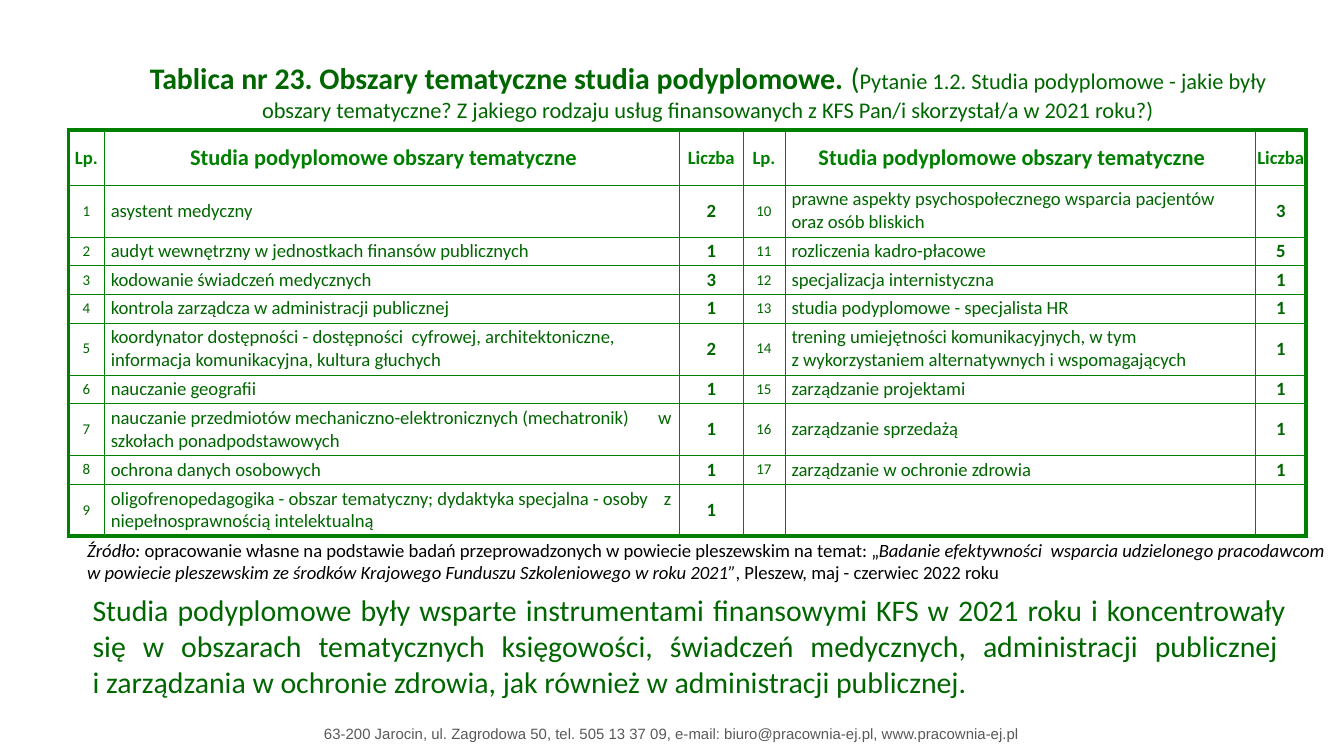
from lxml import etree
from pptx import Presentation
from pptx.dml.color import RGBColor
from pptx.enum.text import MSO_ANCHOR, MSO_AUTO_SIZE, PP_ALIGN
from pptx.oxml.ns import qn
from pptx.util import Inches, Pt

LEFT, CENTER, JUSTIFY = PP_ALIGN.LEFT, PP_ALIGN.CENTER, PP_ALIGN.JUSTIFY
TOP, MIDDLE = MSO_ANCHOR.TOP, MSO_ANCHOR.MIDDLE
NO_AUTOFIT = MSO_AUTO_SIZE.NONE
TITLE_ONLY = 5

COLORS = {"green": "006600", "table": "008000", "text": "000000", "footer": "595959"}
THIN, THICK = 0.25, 2.25

# Column widths as percent of slide width, row heights as percent of slide height
COLUMNS = [2.65, 42.8, 4.75, 3.1, 35, 3.8]
HEADER_ROW, ONE_LINE, TWO_LINES = 7.25, 3.8, 6.87
TWO_LINE_ROWS = {1, 5, 7, 9}

HEADINGS = ["Lp.", "Studia podyplomowe obszary tematyczne", "Liczba"] * 2
AREAS = [
    ("asystent medyczny", 2),
    ("audyt wewnętrzny w jednostkach finansów publicznych", 1),
    ("kodowanie świadczeń medycznych", 3),
    ("kontrola zarządcza w administracji publicznej", 1),
    ("koordynator dostępności - dostępności  cyfrowej, architektoniczne, "
     "informacja komunikacyjna, kultura głuchych", 2),
    ("nauczanie geografii", 1),
    ("nauczanie przedmiotów mechaniczno-elektronicznych (mechatronik)\tw\v"
     "szkołach ponadpodstawowych", 1),
    ("ochrona danych osobowych", 1),
    ("oligofrenopedagogika - obszar tematyczny; dydaktyka specjalna - osoby\tz\v"
     "niepełnosprawnością intelektualną", 1),
    ("prawne aspekty psychospołecznego wsparcia pacjentów oraz osób bliskich", 3),
    ("rozliczenia kadro-płacowe", 5),
    ("specjalizacja internistyczna", 1),
    ("studia podyplomowe - specjalista HR", 1),
    ("trening umiejętności komunikacyjnych, w tym\v"
     "z wykorzystaniem alternatywnych i wspomagających", 1),
    ("zarządzanie projektami", 1),
    ("zarządzanie sprzedażą", 1),
    ("zarządzanie w ochronie zdrowia", 1),
]
ROWS_PER_HALF = 9


class SlideBuilder:
    def __init__(self, presentation, font="Calibri"):
        self.width, self.height = presentation.slide_width, presentation.slide_height
        self.font = font
        self.slide = presentation.slides.add_slide(presentation.slide_layouts[TITLE_ONLY])

    def x(self, percent):
        return round(self.width * percent / 100)

    def y(self, percent):
        return round(self.height * percent / 100)

    def box(self, left, top, width, height):
        return self.x(left), self.y(top), self.x(width), self.y(height)

    def style(self, paragraph, size, color, align=LEFT, bold=False, font=None):
        paragraph.alignment = align
        paragraph.font.name = font or self.font
        paragraph.font.size = Pt(size)
        paragraph.font.bold = bold
        paragraph.font.color.rgb = RGBColor.from_string(COLORS[color])

    def title(self, place, runs, color):
        shape = self.slide.shapes.title
        shape.left, shape.top, shape.width, shape.height = self.box(*place)
        frame = shape.text_frame
        frame.word_wrap, frame.auto_size, frame.vertical_anchor = True, NO_AUTOFIT, TOP
        paragraph = frame.paragraphs[0]
        self.style(paragraph, 16, color, CENTER)
        for text, size, bold in runs:
            run = paragraph.add_run()
            run.text = text
            run.font.size, run.font.bold = Pt(size), bold

    def text(self, place, runs, size, color, align=LEFT, font=None):
        frame = self.slide.shapes.add_textbox(*self.box(*place)).text_frame
        frame.word_wrap = True
        paragraph = frame.paragraphs[0]
        if isinstance(runs, str):
            paragraph.text = runs
        else:
            for text, italic in runs:
                run = paragraph.add_run()
                run.text, run.font.italic = text, italic
        self.style(paragraph, size, color, align, font=font)

    def table(self, left, top, columns, rows):
        place = self.box(left, top, sum(columns), sum(rows))
        table = self.slide.shapes.add_table(len(rows), len(columns), *place).table
        table.first_row = table.horz_banding = False
        for column, width in zip(table.columns, columns):
            column.width = self.x(width)
        for row, height in zip(table.rows, rows):
            row.height = self.y(height)
        last_row, last_column = len(rows) - 1, len(columns) - 1
        for r in range(len(rows)):
            for c in range(len(columns)):
                outer = {"L": c == 0, "R": c == last_column, "T": r == 0, "B": r == last_row}
                self.borders(table.cell(r, c), outer)
        return table

    def borders(self, cell, outer):
        cell.fill.background()
        properties = cell._tc.get_or_add_tcPr()
        for index, (side, is_outer) in enumerate(outer.items()):
            line = etree.Element(qn(f"a:ln{side}"), w=str(Pt(THICK if is_outer else THIN)))
            fill = etree.SubElement(line, qn("a:solidFill"))
            etree.SubElement(fill, qn("a:srgbClr"), val=COLORS["table"])
            properties.insert(index, line)

    def cell(self, cell, text, size, color, align=CENTER, bold=False, insets=(0.05, 0, 0.05, 0)):
        (cell.margin_left, cell.margin_top,
         cell.margin_right, cell.margin_bottom) = map(Inches, insets)
        cell.vertical_anchor = MIDDLE
        paragraph = cell.text_frame.paragraphs[0]
        paragraph.text = text
        if "\t" in text:
            tabs = etree.SubElement(paragraph._p.get_or_add_pPr(), qn("a:tabLst"))
            etree.SubElement(tabs, qn("a:tab"), pos=str(Inches(4.17)), algn="r")
        self.style(paragraph, size, color, align, bold)


def main():
    presentation = Presentation()
    presentation.slide_width = Inches(10)
    presentation.slide_height = presentation.slide_width * 9 // 16
    builder = SlideBuilder(presentation)

    # Contact line
    builder.text((6, 95, 88, 4.27),
                 "63-200 Jarocin, ul. Zagrodowa 50, tel. 505 13 37 09, "
                 "e-mail: biuro@pracownia-ej.pl, www.pracownia-ej.pl",
                 8, "footer", CENTER, "Arial")

    # Title
    builder.title((9, 7.05, 87.4, 10.14), [
        ("Tablica nr 23. Obszary tematyczne studia podyplomowe. ", 16, True),
        ("(", 16, False),
        ("Pytanie 1.2. Studia podyplomowe - jakie były obszary tematyczne? Z jakiego "
         "rodzaju usług finansowanych z KFS Pan/i skorzystał/a w 2021 roku?)", 12, False),
    ], "green")

    # Table of study areas, in two halves side by side
    heights = [HEADER_ROW] + [TWO_LINES if row in TWO_LINE_ROWS else ONE_LINE
                              for row in range(1, ROWS_PER_HALF + 1)]
    table = builder.table(5.1, 17.22, COLUMNS, heights)
    for column, heading in enumerate(HEADINGS):
        wide = column % 3 == 1
        builder.cell(table.cell(0, column), heading, 12 if wide else 10, "table", bold=True,
                     insets=(0.01, 0.01, 0.13 if wide else 0.01, 0))
    for index, (area, count) in enumerate(AREAS):
        half, row = divmod(index, ROWS_PER_HALF)
        number_cell, area_cell, count_cell = (
            table.cell(row + 1, half * 3 + column) for column in range(3))
        builder.cell(number_cell, str(index + 1), 8, "green")
        builder.cell(area_cell, area, 10, "green", LEFT)
        builder.cell(count_cell, str(count), 10, "green", bold=True)
    for column in range(3, 6):
        builder.cell(table.cell(ROWS_PER_HALF, column), "", 10, "green")

    # Source note
    builder.text((5.5, 70.4, 94.5, 7.83), [
        ("Źródło: ", True),
        ("opracowanie własne na podstawie badań przeprowadzonych w powiecie pleszewskim "
         "na temat: „", False),
        ("Badanie efektywności  wsparcia udzielonego pracodawcom w powiecie pleszewskim "
         "ze środków Krajowego Funduszu Szkoleniowego w roku 2021”", True),
        (", Pleszew, maj - czerwiec 2022 roku", False),
    ], 10, "text")

    # Conclusion
    builder.text((5.9, 77.4, 91.5, 16.19),
                 "Studia podyplomowe były wsparte instrumentami finansowymi KFS w 2021 roku "
                 "i koncentrowały  się w obszarach tematycznych księgowości, świadczeń "
                 "medycznych, administracji publicznej \vi zarządzania w ochronie zdrowia, "
                 "jak również w administracji publicznej.",
                 16, "green", JUSTIFY)

    presentation.save("out.pptx")


if __name__ == "__main__":
    main()
